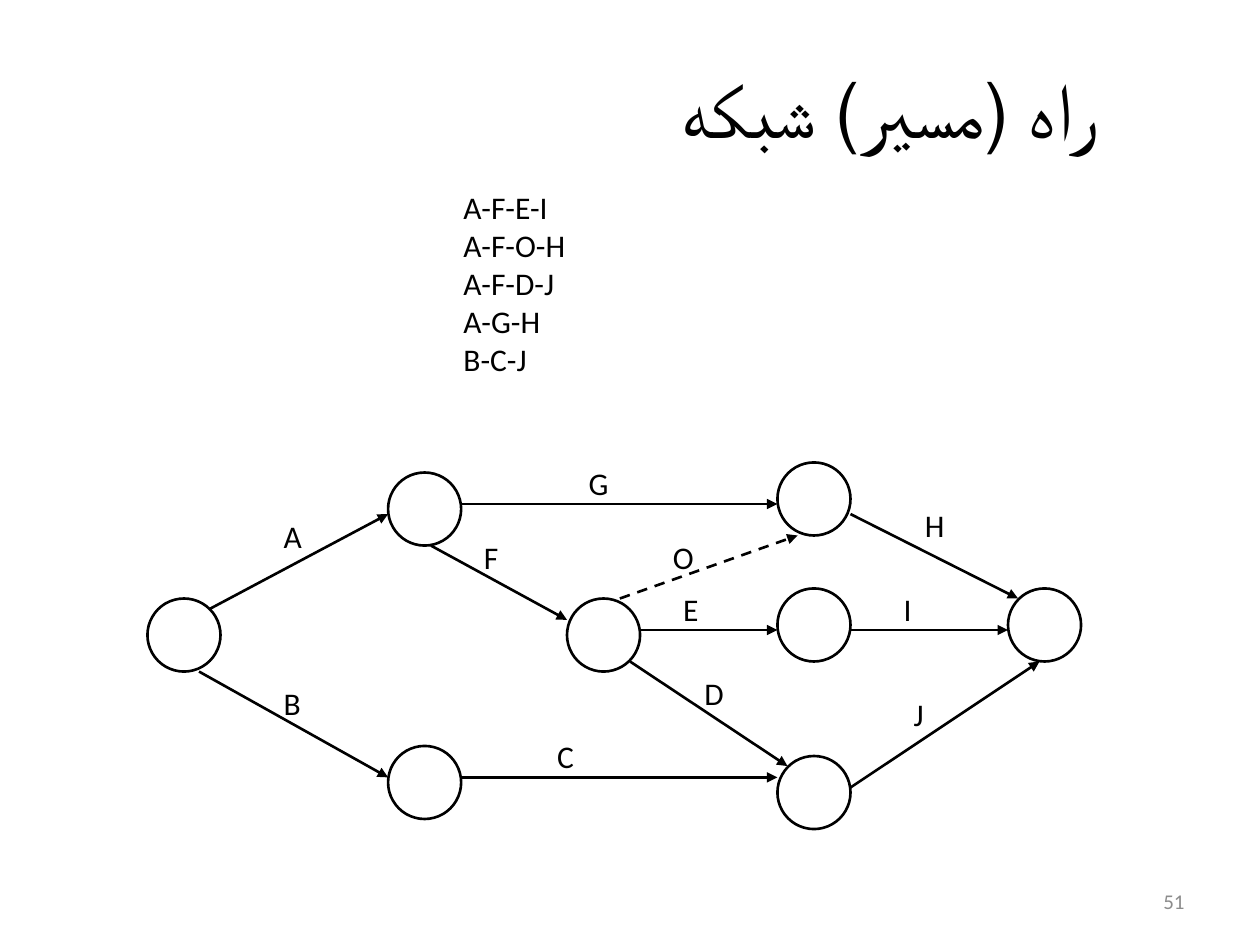
from dataclasses import dataclass
from typing import Any

import lxml.etree
import pptx
import pptx.dml.color
import pptx.enum.dml
import pptx.enum.shapes
import pptx.enum.text
import pptx.oxml.ns
import pptx.util

Inches = pptx.util.Inches
Align = pptx.enum.text.PP_ALIGN
Preset = pptx.enum.shapes.MSO_SHAPE


@dataclass(frozen=True)
class Theme:
    font: str = "Calibri"
    ink: str = "000000"
    paper: str = "FFFFFF"
    muted: str = "8C8C8C"
    title_size: int = 44
    body_size: int = 18
    number_size: int = 12
    line_width: float = 1.5


@dataclass(frozen=True)
class Node:
    left: float
    top: float


@dataclass(frozen=True)
class Activity:
    """An arrow of the network and the corner of its label."""
    name: str
    start: tuple[float, float]
    end: tuple[float, float]
    label: tuple[float, float]
    dashed: bool = False


THEME = Theme()
NODE_SIZE = 0.58
LABEL_SIZE = 0.5
PATHS = ["A-F-E-I", "A-F-O-H", "A-F-D-J", "A-G-H", "B-C-J"]

NODES = [
    Node(1.17, 4.75), Node(3.08, 3.75), Node(6.17, 3.67), Node(8, 4.67),
    Node(6.17, 4.67), Node(4.5, 4.75), Node(3.08, 5.92), Node(6.17, 6),
]

ACTIVITIES = [
    Activity("A", (1.67, 4.83), (3.08, 4.08), (2.08, 4)),
    Activity("G", (3.67, 4), (6.17, 4), (4.5, 3.58)),
    Activity("F", (3.42, 4.33), (4.5, 4.92), (3.67, 4.17)),
    Activity("B", (1.58, 5.33), (3.08, 6.17), (2.08, 5.33)),
    Activity("C", (3.67, 6.17), (6.17, 6.17), (4.25, 5.75)),
    Activity("D", (5, 5.25), (6.25, 6.08), (5.42, 5.25)),
    Activity("H", (6.75, 4.08), (8.08, 4.75), (7.17, 3.92)),
    Activity("J", (6.75, 6.25), (8.25, 5.25), (7.08, 5.42)),
    Activity("E", (5.08, 5), (6.17, 5), (5.25, 4.58)),
    Activity("I", (6.75, 5), (8, 5), (7, 4.58)),
    Activity("O", (4.92, 4.75), (6.33, 4.25), (5.17, 4.17), dashed=True),
]


def rgb(value: str) -> pptx.dml.color.RGBColor:
    return pptx.dml.color.RGBColor.from_string(value)


def apply_format(target: Any, values: dict[str, Any]) -> None:
    for name, value in values.items():
        setattr(target, name, value)


def write_text(shape: Any, lines: list[str], size: int, color: str = THEME.ink,
               alignment: Any = Align.LEFT, wrap: bool = True) -> None:
    frame = shape.text_frame
    apply_format(frame, {
        "text": "\n".join(lines),
        "word_wrap": wrap,
        "vertical_anchor": pptx.enum.text.MSO_ANCHOR.MIDDLE,
    })
    for paragraph in frame.paragraphs:
        paragraph.alignment = alignment
        for run in paragraph.runs:
            apply_format(run.font, {"name": THEME.font, "size": pptx.util.Pt(size)})
            run.font.color.rgb = rgb(color)


def add_plain_shape(slide: Any, preset: Any, left: float, top: float,
                    width: float, height: float) -> Any:
    """Add a paper-coloured shape with no outline and no shadow."""
    shape = slide.shapes.add_shape(
        preset, Inches(left), Inches(top), Inches(width), Inches(height))
    shape.shadow.inherit = False
    shape.fill.solid()
    shape.fill.fore_color.rgb = rgb(THEME.paper)
    shape.line.fill.background()
    return shape


def style_line(line: Any) -> None:
    line.color.rgb = rgb(THEME.ink)
    line.width = pptx.util.Pt(THEME.line_width)


def add_label(slide: Any, activity: Activity) -> None:
    shape = add_plain_shape(slide, Preset.OVAL, *activity.label, LABEL_SIZE, LABEL_SIZE)
    write_text(shape, [activity.name], THEME.body_size, wrap=False)


def add_node(slide: Any, node: Node) -> None:
    shape = add_plain_shape(slide, Preset.OVAL, node.left, node.top, NODE_SIZE, NODE_SIZE)
    style_line(shape.line)


def add_arrow(slide: Any, activity: Activity) -> None:
    points = [Inches(value) for value in activity.start + activity.end]
    connector = slide.shapes.add_connector(
        pptx.enum.shapes.MSO_CONNECTOR.STRAIGHT, *points)
    style_line(connector.line)
    if activity.dashed:
        connector.line.dash_style = pptx.enum.dml.MSO_LINE.DASH
    qualified = pptx.oxml.ns.qn
    outline = connector.line._get_or_add_ln()
    lxml.etree.SubElement(outline, qualified("a:tailEnd"), type="triangle")
    lxml.etree.SubElement(connector._element.spPr, qualified("a:effectLst"))


def add_title(slide: Any) -> None:
    title = slide.shapes.title
    apply_format(title, {
        "left": Inches(0.5), "top": Inches(0.42),
        "width": Inches(8.25), "height": Inches(0.87),
    })
    write_text(title, ["راه (مسير) شبکه"], THEME.title_size, alignment=Align.RIGHT)
    title.text_frame.paragraphs[0]._p.get_or_add_pPr().set("rtl", "1")


def main() -> None:
    presentation = pptx.Presentation()
    apply_format(presentation, {"slide_width": Inches(10), "slide_height": Inches(7.5)})
    slide = presentation.slides.add_slide(presentation.slide_layouts[5])

    # Title and slide number
    add_title(slide)
    number = slide.shapes.add_textbox(Inches(7.17), Inches(6.95), Inches(2.33), Inches(0.4))
    write_text(number, ["51"], THEME.number_size, THEME.muted, Align.RIGHT)

    # List of paths
    path_list = add_plain_shape(slide, Preset.RECTANGLE, 3.58, 1.08, 2, 2.33)
    write_text(path_list, PATHS, THEME.body_size, wrap=False)

    # Network: labels at the back, then nodes, then arrows
    for activity in ACTIVITIES:
        add_label(slide, activity)
    for node in NODES:
        add_node(slide, node)
    for activity in ACTIVITIES:
        add_arrow(slide, activity)

    presentation.save("out.pptx")


if __name__ == "__main__":
    main()
